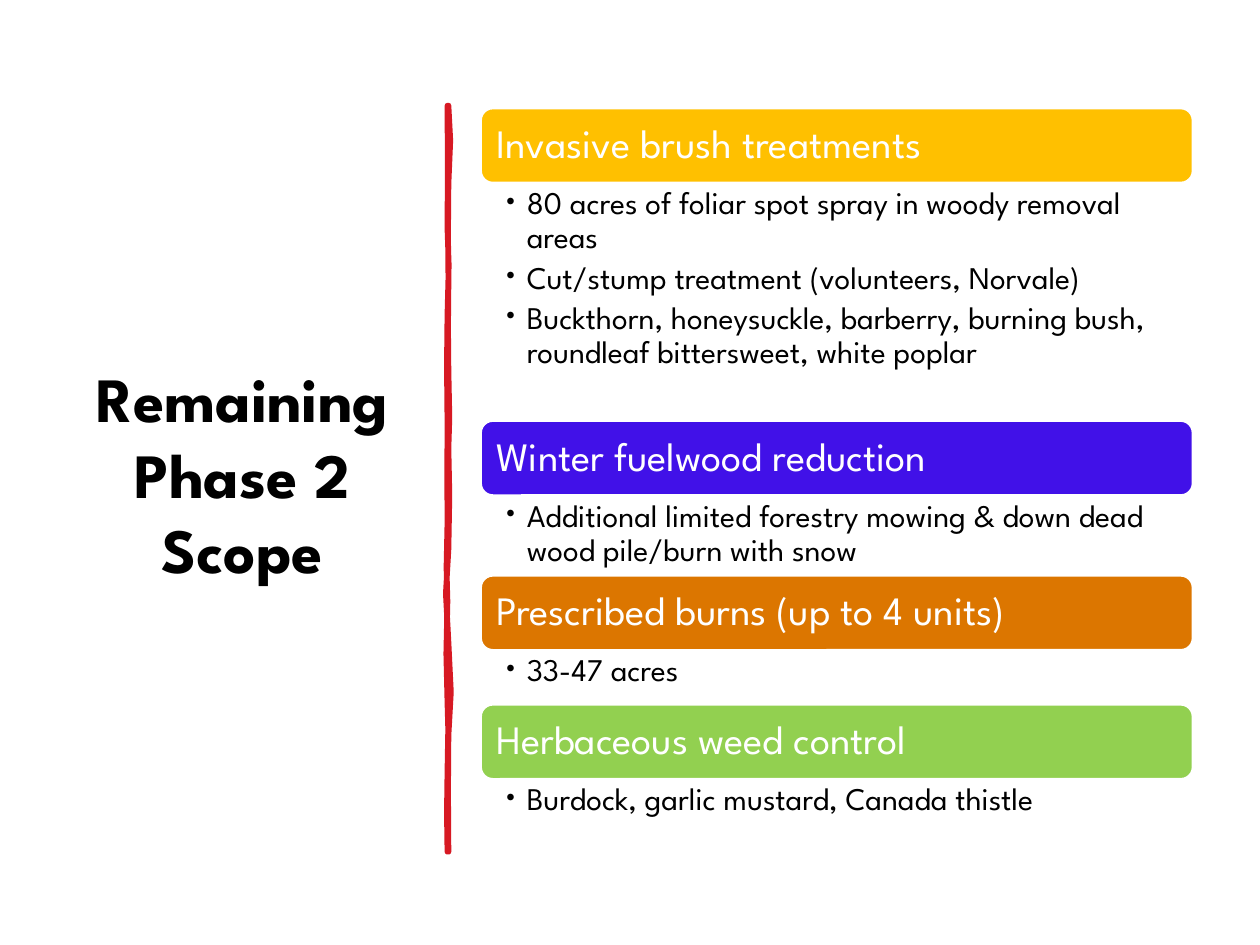
"""Build the slide on the remaining phase 2 scope."""
from lxml import etree
from pptx import Presentation
from pptx.dml.color import RGBColor
from pptx.enum.shapes import MSO_SHAPE as Shape
from pptx.enum.text import MSO_ANCHOR as Anchor, PP_ALIGN as Align
from pptx.oxml.ns import qn
from pptx.util import Cm, Pt

BLACK = RGBColor(0, 0, 0)
WHITE = RGBColor(255, 255, 255)
RED = RGBColor(0xD7, 0x19, 0x23)
GOLD = RGBColor(0xFF, 0xC0, 0x00)
VIOLET = RGBColor(0x41, 0x11, 0xE8)
ORANGE = RGBColor(0xDC, 0x76, 0x00)
GREEN = RGBColor(0x92, 0xD0, 0x50)
FONT = "League Spartan"

TITLE = "Remaining Phase 2 Scope"
SECTIONS = [
    ("Invasive brush treatments", GOLD, 4.77, [
        "80 acres of foliar spot spray in woody removal areas",
        "Cut/stump treatment (volunteers, Norvale)",
        "Buckthorn, honeysuckle, barberry, burning bush, "
        "roundleaf bittersweet, white poplar",
    ]),
    ("Winter fuelwood reduction", VIOLET, 1.59, [
        "Additional limited forestry mowing & down dead wood pile/burn with snow",
    ]),
    ("Prescribed burns (up to 4 units)", ORANGE, 1.07, ["33-47 acres"]),
    ("Herbaceous weed control", GREEN, 1.07, [
        "Burdock, garlic mustard, Canada thistle",
    ]),
]

LEFT, TOP, WIDTH, BAR_HEIGHT = 9.68, 2.17, 14.38, 1.53
BULLET_INDENT = Cm(0.48)
STEPS = 2
DIVIDER_START = (9.04, 2.13)
DIVIDER_CURVES = [
    (9.09, 2.59, 9.09, 3.02, 9.04, 3.71),
    (8.99, 4.39, 9.07, 4.95, 9.04, 5.74),
    (9.02, 6.53, 9.04, 6.65, 9.04, 7.47),
    (9.04, 8.26, 9.09, 8.69, 9.04, 9.04),
    (8.99, 9.4, 9.14, 10.52, 9.04, 11.07),
    (8.97, 11.61, 8.97, 12.29, 9.04, 12.95),
    (9.12, 13.61, 9.09, 14.33, 9.04, 14.83),
    (8.99, 15.32, 9.07, 16.51, 9.04, 17.17),
    (9.04, 17.15, 9.02, 17.15, 9.02, 17.17),
    (9.04, 16.41, 8.97, 16.36, 9.02, 15.57),
    (9.04, 14.81, 9.04, 14.48, 9.02, 14.15),
    (8.99, 13.82, 8.99, 12.57, 9.02, 12.12),
    (9.02, 11.66, 8.97, 11.3, 9.02, 10.54),
    (9.04, 9.8, 8.99, 9.47, 9.02, 8.51),
    (9.04, 7.57, 8.97, 7.14, 9.02, 6.35),
    (9.04, 5.54, 9.07, 5.08, 9.02, 4.6),
    (8.94, 4.14, 9.12, 2.64, 9.02, 2.13),
]


def frame_format(side, end, anchor):
    return {"word_wrap": True, "vertical_anchor": anchor,
            "margin_left": Cm(side), "margin_right": Cm(side),
            "margin_top": Cm(end), "margin_bottom": Cm(end)}


TITLE_FRAME = frame_format(0.25, 0.13, Anchor.MIDDLE)
BAR_FRAME = frame_format(0.25, 0.25, Anchor.MIDDLE)
BODY_FRAME = frame_format(0.46, 0.08, Anchor.TOP)
TITLE_PARA = {"alignment": Align.CENTER}
BAR_PARA = {"alignment": Align.LEFT, "line_spacing": 0.9}
BODY_PARA = {**BAR_PARA, "level": 1, "space_after": Pt(3.6)}
TITLE_FONT = {"name": FONT, "size": Pt(36), "bold": True}
BAR_FONT = {"name": FONT, "size": Pt(23)}
BODY_FONT = {"name": FONT, "size": Pt(18)}


def apply(target, values):
    for name, value in values.items():
        setattr(target, name, value)


def write(box, lines, frame_values, para_values, font_values, color):
    frame = box.text_frame
    apply(frame, frame_values)
    for index, line in enumerate(lines):
        para = frame.add_paragraph() if index else frame.paragraphs[0]
        apply(para, para_values)
        span = para.add_run()
        span.text = line
        apply(span.font, font_values)
        span.font.color.rgb = color


def add_bullets(box):
    for para in box.text_frame.paragraphs:
        properties = para._p.get_or_add_pPr()
        properties.set("marL", str(BULLET_INDENT))
        properties.set("indent", str(-BULLET_INDENT))
        etree.SubElement(properties, qn("a:buFont")).set("typeface", FONT)
        etree.SubElement(properties, qn("a:buChar")).set("char", "•")


def paint(shape, fill, line, weight):
    shape.shadow.inherit = False
    shape.fill.solid()
    shape.fill.fore_color.rgb = fill
    shape.line.color.rgb = line
    shape.line.width = Pt(weight)


def divider_points():
    x0, y0 = DIVIDER_START
    for x1, y1, x2, y2, x3, y3 in DIVIDER_CURVES:
        for step in range(1, STEPS + 1):
            t = step / STEPS
            a, b, c, d = (1 - t) ** 3, 3 * t * (1 - t) ** 2, 3 * t * t * (1 - t), t ** 3
            yield (Cm(a * x0 + b * x1 + c * x2 + d * x3),
                   Cm(a * y0 + b * y1 + c * y2 + d * y3))
        x0, y0 = x3, y3


def add_divider(page):
    builder = page.shapes.build_freeform(*map(Cm, DIVIDER_START))
    builder.add_line_segments(list(divider_points()), close=True)
    divider = builder.convert_to_shape()
    paint(divider, RED, RED, 3.25)
    etree.SubElement(divider.line._get_or_add_ln(), qn("a:round"))


def add_sections(page):
    top = TOP
    for heading, color, body_height, lines in SECTIONS:
        bar = page.shapes.add_shape(
            Shape.ROUNDED_RECTANGLE, Cm(LEFT), Cm(top), Cm(WIDTH), Cm(BAR_HEIGHT))
        paint(bar, color, WHITE, 2)
        write(bar, [heading], BAR_FRAME, BAR_PARA, BAR_FONT, WHITE)
        top += BAR_HEIGHT
        body = page.shapes.add_textbox(
            Cm(LEFT), Cm(top), Cm(WIDTH), Cm(body_height))
        write(body, lines, BODY_FRAME, BODY_PARA, BODY_FONT, BLACK)
        add_bullets(body)
        top += body_height


def main():
    deck = Presentation()
    deck.slide_width, deck.slide_height = Cm(25.4), Cm(19.05)
    page = deck.slides.add_slide(deck.slide_layouts[6])
    title = page.shapes.add_textbox(Cm(1.33), Cm(1.78), Cm(7.11), Cm(15.52))
    write(title, [TITLE], TITLE_FRAME, TITLE_PARA, TITLE_FONT, BLACK)
    add_divider(page)
    add_sections(page)
    deck.save("out.pptx")


if __name__ == "__main__":
    main()
